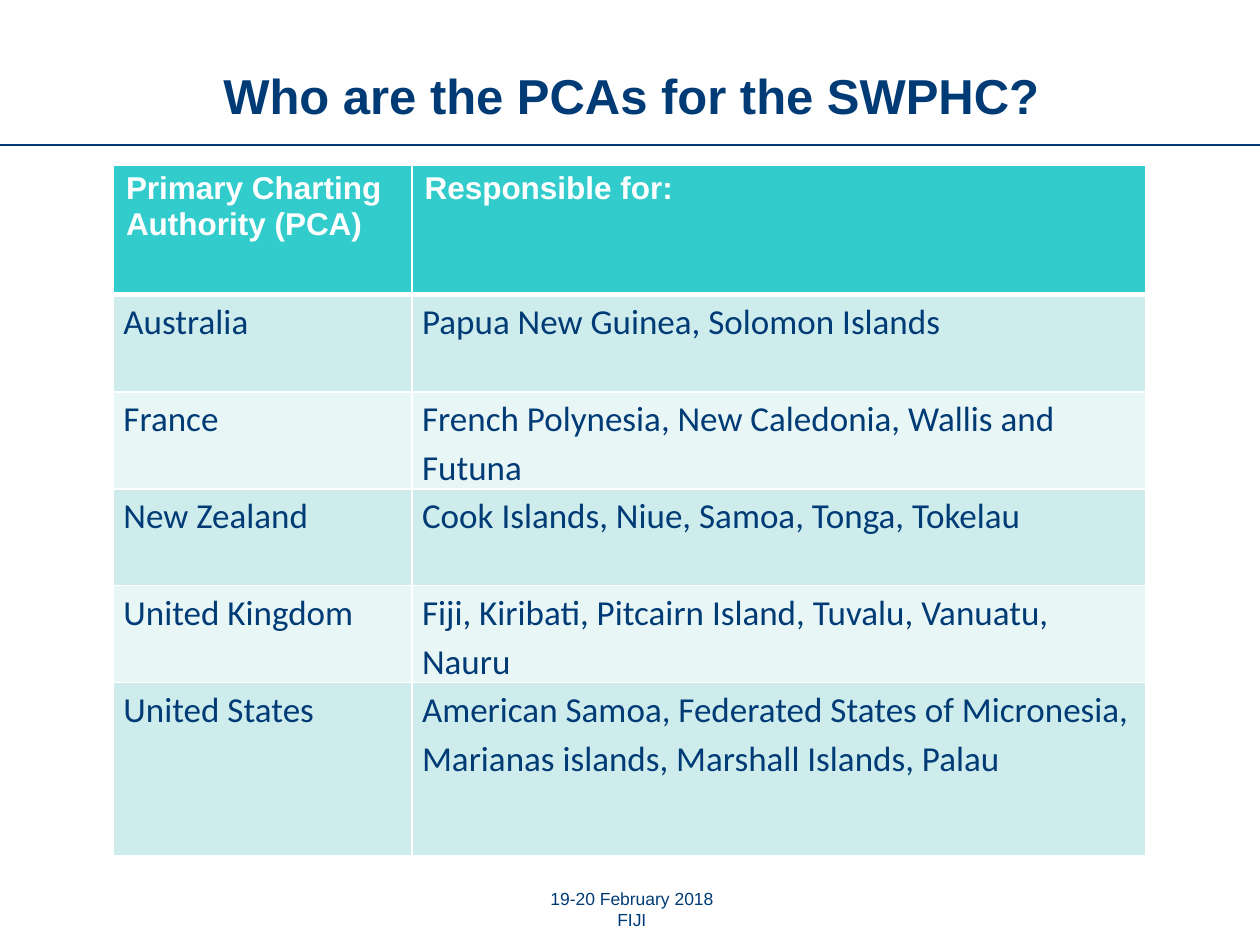
from dataclasses import dataclass

from lxml import etree
from pptx import Presentation
from pptx.dml.color import RGBColor
from pptx.enum.shapes import MSO_CONNECTOR
from pptx.enum.text import MSO_ANCHOR, PP_ALIGN
from pptx.oxml.ns import qn
from pptx.util import Inches, Pt

STRAIGHT = MSO_CONNECTOR.STRAIGHT
CENTER = PP_ALIGN.CENTER
TOP, MIDDLE = MSO_ANCHOR.TOP, MSO_ANCHOR.MIDDLE


@dataclass(frozen=True)
class Theme:
    navy: str = "003B76"
    white: str = "FFFFFF"
    header_fill: str = "33CCCC"
    band_fills: tuple = ("CEECEC", "E8F6F6")
    heading_font: str = "Arial"
    body_font: str = "Calibri"
    title_size: int = 28
    header_size: int = 18
    body_size: int = 20
    footer_size: int = 10
    border: int = 1
    header_border: int = 3


AUTHORITIES = [
    ("Australia", "Papua New Guinea, Solomon Islands"),
    ("France", "French Polynesia, New Caledonia, Wallis and Futuna"),
    ("New Zealand", "Cook Islands, Niue, Samoa, Tonga, Tokelau"),
    ("United Kingdom", "Fiji, Kiribati, Pitcairn Island, Tuvalu, Vanuatu, Nauru"),
    ("United States", "American Samoa, Federated States of Micronesia, "
                      "Marianas islands, Marshall Islands, Palau"),
]
HEADER = ("Primary Charting Authority (PCA)", "Responsible for:")
COLUMN_WIDTHS = (2.37, 5.82)
ROW_HEIGHTS = (1.03, 0.77, 0.77, 0.77, 0.77, 1.37)


class SlideBuilder:
    def __init__(self, slide, theme):
        self.slide = slide
        self.theme = theme

    def style_text(self, frame, size, color, font, bold=False):
        for para in frame.paragraphs:
            for span in para.runs:
                span.font.name = font
                span.font.size = Pt(size)
                span.font.bold = bold
                span.font.color.rgb = RGBColor.from_string(color)

    def text(self, content, left, top, width, height, size, bold=False, anchor=TOP):
        box = self.slide.shapes.add_textbox(
            Inches(left), Inches(top), Inches(width), Inches(height))
        frame = box.text_frame
        frame.word_wrap = True
        frame.vertical_anchor = anchor
        frame.text = content
        for para in frame.paragraphs:
            para.alignment = CENTER
        self.style_text(frame, size, self.theme.navy, self.theme.heading_font, bold)

    def rule(self, left, right, y):
        line = self.slide.shapes.add_connector(
            STRAIGHT, Inches(left), Inches(y), Inches(right), Inches(y))
        line.line.color.rgb = RGBColor.from_string(self.theme.navy)
        line.line.width = Pt(0.75)
        etree.SubElement(line._element.spPr, qn("a:effectLst"))

    def borders(self, cell, top, bottom):
        properties = cell._tc.get_or_add_tcPr()
        side = self.theme.border
        widths = {"a:lnL": side, "a:lnR": side, "a:lnT": top, "a:lnB": bottom}
        for position, (tag, width) in enumerate(widths.items()):
            edge = etree.Element(qn(tag), w=str(Pt(width)))
            fill = etree.SubElement(edge, qn("a:solidFill"))
            etree.SubElement(fill, qn("a:srgbClr"), val=self.theme.white)
            properties.insert(position, edge)

    def cell(self, cell, content, fill, inset_x, inset_y):
        cell.margin_left = cell.margin_right = Inches(inset_x)
        cell.margin_top = cell.margin_bottom = Inches(inset_y)
        cell.fill.solid()
        cell.fill.fore_color.rgb = RGBColor.from_string(fill)
        cell.text_frame.text = content

    def header_cell(self, cell, content):
        theme = self.theme
        self.cell(cell, content, theme.header_fill, 0.1, 0.05)
        self.style_text(cell.text_frame, theme.header_size, theme.white,
                        theme.heading_font, bold=True)
        self.borders(cell, theme.border, theme.header_border)

    def body_cell(self, cell, content, row):
        theme = self.theme
        fill = theme.band_fills[(row - 1) % len(theme.band_fills)]
        self.cell(cell, content, fill, 0.08, 0)
        cell.text_frame.paragraphs[0].line_spacing = 1.15
        self.style_text(cell.text_frame, theme.body_size, theme.navy, theme.body_font)
        self.borders(cell, theme.header_border if row == 1 else theme.border, theme.border)

    def table(self, header, rows, left, top, widths, heights):
        table = self.slide.shapes.add_table(
            len(heights), len(widths), Inches(left), Inches(top),
            Inches(sum(widths)), Inches(sum(heights))).table
        for column, width in zip(table.columns, widths):
            column.width = Inches(width)
        for row, height in zip(table.rows, heights):
            row.height = Inches(height)
        for column, content in enumerate(header):
            self.header_cell(table.cell(0, column), content)
        for row, contents in enumerate(rows, start=1):
            for column, content in enumerate(contents):
                self.body_cell(table.cell(row, column), content, row)


def main():
    theme = Theme()
    deck = Presentation()
    deck.slide_width, deck.slide_height = Inches(10), Inches(7.5)
    page = SlideBuilder(deck.slides.add_slide(deck.slide_layouts[6]), theme)

    # Rule under the title, and footer
    page.rule(0, 10, 1.15)
    page.text("19-20 February 2018\nFIJI", 3.43, 7, 3.17, 0.5, theme.footer_size)

    # Title
    page.text("Who are the PCAs for the SWPHC?", 0.51, 0.44, 9, 0.63,
              theme.title_size, bold=True, anchor=MIDDLE)

    # Charting authorities and their areas
    page.table(HEADER, AUTHORITIES, 0.9, 1.31, COLUMN_WIDTHS, ROW_HEIGHTS)

    deck.save("out.pptx")


if __name__ == "__main__":
    main()
